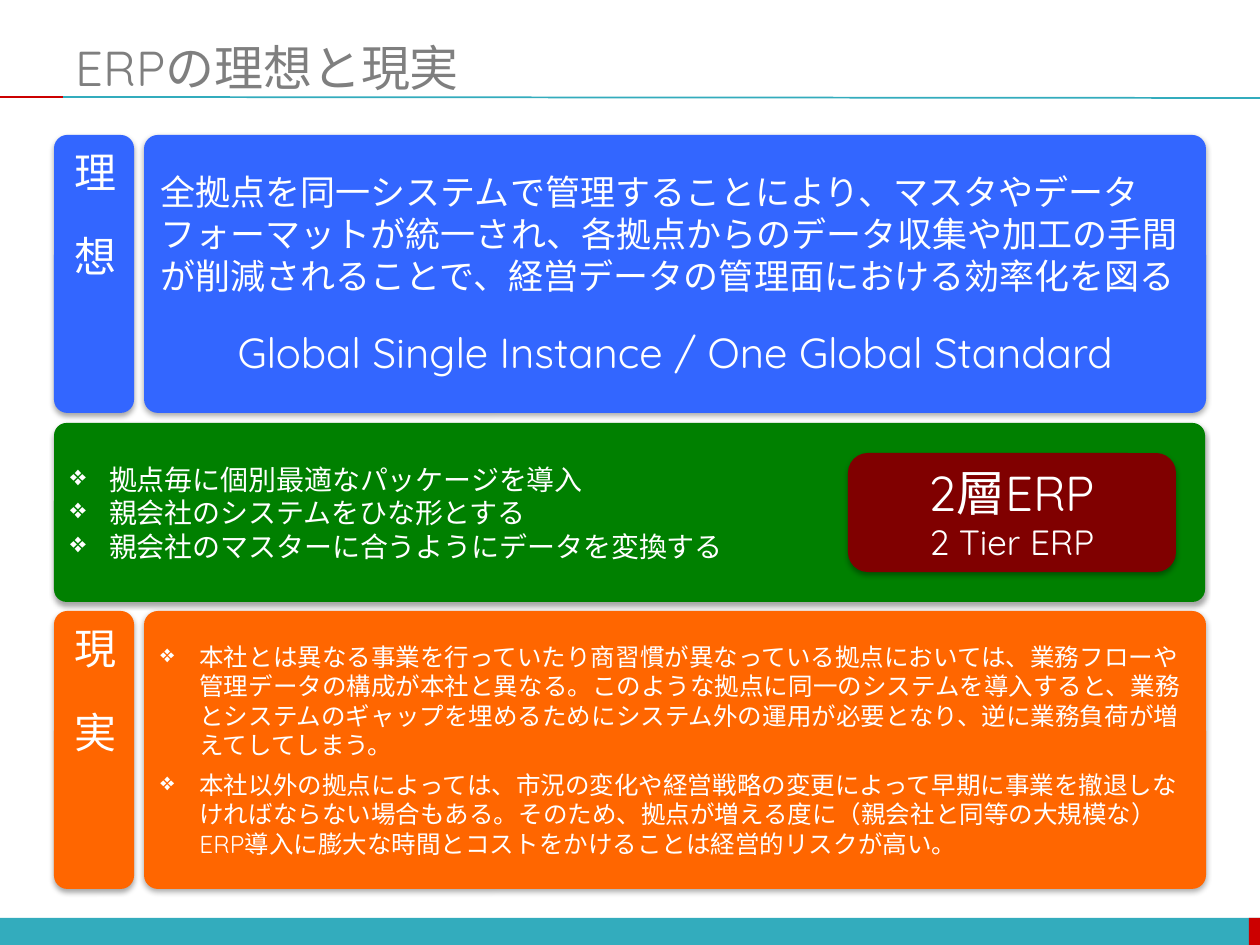
from dataclasses import dataclass

from lxml import etree
from pptx import Presentation
from pptx import util as u
from pptx.dml.color import RGBColor
from pptx.enum import shapes, text
from pptx.oxml import ns

PX = 914400 / 126


@dataclass(frozen=True)
class Theme:
    font: str = "Quicksand"
    title: str = "7F7F7F"
    white: str = "FFFFFF"
    teal: str = "33ACBD"
    red: str = "CC0000"
    ideal: str = "3366FF"
    bridge: str = "008000"
    reality: str = "FF6600"
    answer: str = "800000"
    shadow: str = "000000"
    huge: int = 28
    large: int = 24
    lead: int = 20
    medium: int = 16
    small: int = 14


THEME = Theme()

IDEAL = (
    "全拠点を同一システムで管理することにより、マスタやデータフォーマットが統一され、"
    "各拠点からのデータ収集や加工の手間が削減されることで、経営データの管理面における効率化を図る"
)
MEASURES = [
    "拠点毎に個別最適なパッケージを導入",
    "親会社のシステムをひな形とする",
    "親会社のマスターに合うようにデータを変換する",
]
PROBLEMS = [
    "本社とは異なる事業を行っていたり商習慣が異なっている拠点においては、業務フローや"
    "管理データの構成が本社と異なる。このような拠点に同一のシステムを導入すると、"
    "業務とシステムのギャップを埋めるためにシステム外の運用が必要となり、"
    "逆に業務負荷が増えてしてしまう。",
    "本社以外の拠点によっては、市況の変化や経営戦略の変更によって早期に事業を撤退しなければ"
    "ならない場合もある。そのため、拠点が増える度に（親会社と同等の大規模な）"
    "ERP導入に膨大な時間とコストをかけることは経営的リスクが高い。",
]


def px(length):
    return u.Emu(round(length * PX))


def assign(target, values):
    for attribute, value in values.items():
        setattr(target, attribute, value)


def add_child(parent, tag, **attributes):
    child = etree.SubElement(parent, ns.qn(tag))
    for key, value in attributes.items():
        child.set(key, str(value))
    return child


def style_font(font, size, color):
    assign(font, {"name": THEME.font, "size": u.Pt(size)})
    font.color.rgb = RGBColor.from_string(color)


def add_block(container, kind, box, color):
    block = container.add_shape(kind, *map(px, box))
    block.shadow.inherit = False
    block.fill.solid()
    block.fill.fore_color.rgb = RGBColor.from_string(color)
    block.line.fill.background()
    return block


def add_panel(container, box, color, rounding=None):
    panel = add_block(container, shapes.MSO_SHAPE.ROUNDED_RECTANGLE, box, color)
    if rounding is not None:
        panel.adjustments[0] = rounding
    effects = panel._element.spPr.find(ns.qn("a:effectLst"))
    shade = add_child(effects, "a:outerShdw", blurRad=40000, dist=23000,
                      dir=5400000, rotWithShape=0)
    tint = add_child(shade, "a:srgbClr", val=THEME.shadow)
    add_child(tint, "a:alpha", val=35000)
    assign(panel.text_frame, {"word_wrap": True,
                              "vertical_anchor": text.MSO_ANCHOR.MIDDLE})
    return panel


def write(panel, lines, bulleted=False):
    frame = panel.text_frame
    for index, (wording, size, align, before) in enumerate(lines):
        paragraph = frame.add_paragraph() if index else frame.paragraphs[0]
        paragraph.text = wording
        assign(paragraph, {"alignment": align, "space_before": u.Pt(before)})
        if bulleted:
            properties = paragraph._p.get_or_add_pPr()
            properties.set("marL", str(px(39)))
            properties.set("indent", str(-px(39)))
            add_child(properties, "a:buChar", char="❖")
        style_font(paragraph.font, size, THEME.white)


def add_bullets(panel, items, size, gap=0):
    write(panel, [(item, size, text.PP_ALIGN.LEFT, gap if index else 0)
                  for index, item in enumerate(items)], bulleted=True)


def add_side_label(container, box, color, wording):
    label = add_panel(container, box, color)
    write(label, [(wording, THEME.large, text.PP_ALIGN.CENTER, 0)])
    label.text_frame._txBody.bodyPr.set("vert", "eaVert")


def add_rule(container, start, end, color):
    rule = container.add_connector(shapes.MSO_CONNECTOR.STRAIGHT,
                                   *map(px, start + end))
    rule.line.color.rgb = RGBColor.from_string(color)
    rule.line.width = u.Pt(1)
    add_child(rule._element.spPr, "a:effectLst")


def add_title(slide, wording):
    title = slide.shapes.title
    assign(title, {"left": px(63), "top": px(38),
                   "width": px(1197), "height": px(58)})
    assign(title.text_frame, {"text": wording, "word_wrap": True,
                              "auto_size": text.MSO_AUTO_SIZE.NONE,
                              "vertical_anchor": text.MSO_ANCHOR.MIDDLE})
    heading = title.text_frame.paragraphs[0]
    heading.alignment = text.PP_ALIGN.LEFT
    style_font(heading.font, THEME.huge, THEME.title)


def add_frame(container):
    for left, width, color in ((0, 1260, THEME.teal), (1249, 11, THEME.red)):
        add_block(container, shapes.MSO_SHAPE.RECTANGLE,
                  (left, 918, width, 27), color)
    add_rule(container, (63, 97), (1260, 98), THEME.teal)
    add_rule(container, (0, 97), (63, 97), THEME.red)


def main():
    deck = Presentation()
    assign(deck, {"slide_width": px(1260), "slide_height": px(945)})
    slide = deck.slides.add_slide(deck.slide_layouts[5])
    canvas = slide.shapes
    left, center = text.PP_ALIGN.LEFT, text.PP_ALIGN.CENTER

    add_title(slide, "ERPの理想と現実")
    add_frame(canvas)

    ideal = add_panel(canvas, (144, 135, 1062, 278), THEME.ideal, 0.05)
    write(ideal, [
        (IDEAL, THEME.lead, left, 0),
        ("Global Single Instance / One Global Standard", THEME.large, center, 17),
    ])
    for top, color, wording in ((135, THEME.ideal, "理\u3000想".replace("\u3000", "　")),
                                (611, THEME.reality, "現　実")):
        add_side_label(canvas, (54, top, 80, 278), color, wording)

    reality = add_panel(canvas, (144, 611, 1062, 278), THEME.reality, 0.05)
    add_bullets(reality, PROBLEMS, THEME.small, gap=6)

    compromise = canvas.add_group_shape().shapes
    bridge = add_panel(compromise, (54, 423, 1151, 179), THEME.bridge, 0.07)
    add_bullets(bridge, MEASURES, THEME.medium)
    answer = add_panel(compromise, (848, 453, 328, 119), THEME.answer)
    write(answer, [("2層ERP", THEME.huge, center, 0),
                   ("2 Tier ERP", THEME.lead, center, 0)])

    deck.save("out.pptx")


if __name__ == "__main__":
    main()
